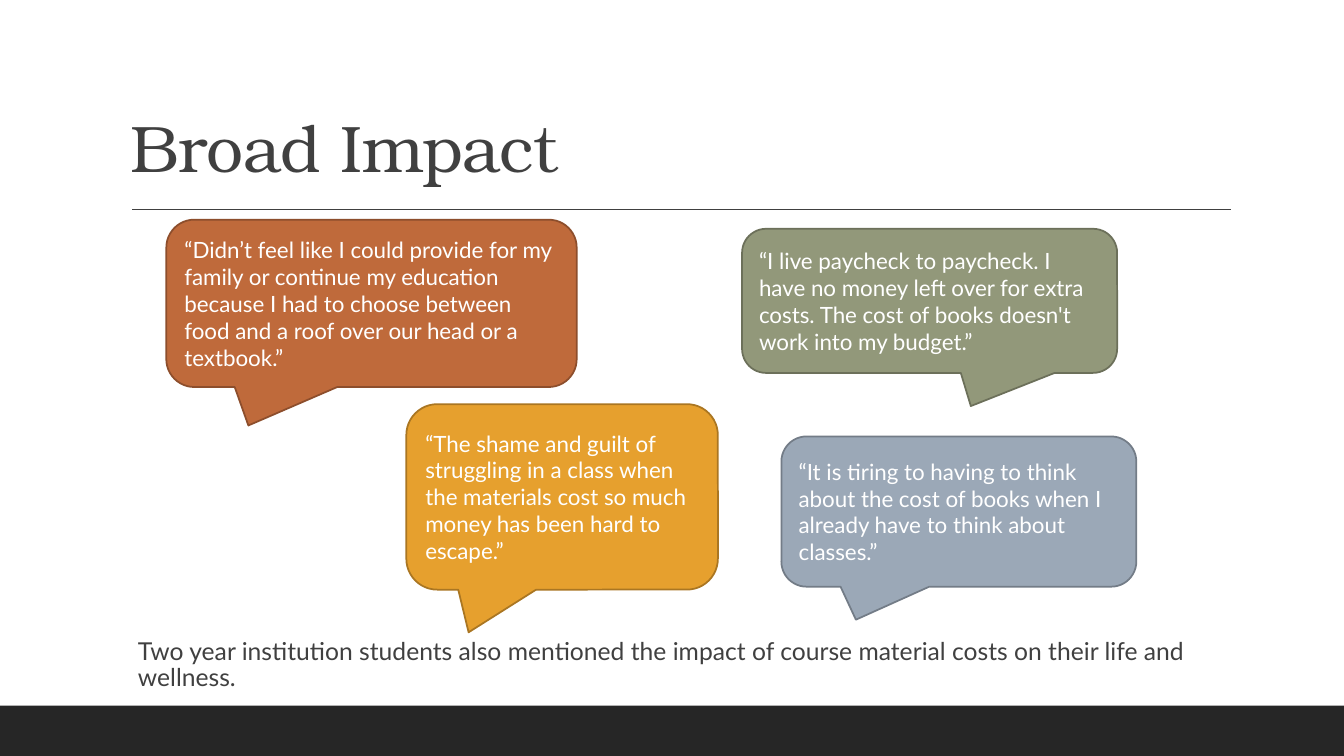
from pptx import Presentation
from pptx.dml.color import RGBColor
from pptx.enum.shapes import MSO_CONNECTOR as CONNECTOR, MSO_SHAPE as SHAPE
from pptx.enum.text import MSO_ANCHOR as ANCHOR, PP_ALIGN as ALIGN
from pptx.oxml.ns import qn
from pptx.util import Pt

PX = 9144  # EMU per px, 100 px to the inch
WHITE = RGBColor(0xFF, 0xFF, 0xFF)
DARK = RGBColor(0x26, 0x26, 0x26)
GREY = RGBColor(0x40, 0x40, 0x40)
BLUE, BLUE_EDGE = RGBColor(0x9B, 0xA8, 0xB7), RGBColor(0x73, 0x7C, 0x87)
RUST, RUST_EDGE = RGBColor(0xBF, 0x6A, 0x3B), RGBColor(0x8D, 0x4E, 0x2C)
GREEN, GREEN_EDGE = RGBColor(0x92, 0x98, 0x7A), RGBColor(0x6C, 0x70, 0x5A)
AMBER, AMBER_EDGE = RGBColor(0xE6, 0xA0, 0x2E), RGBColor(0xAA, 0x76, 0x22)


def px(*lengths):
    return [length * PX for length in lengths]


def write(shape, text, font, size, color, anchor, **paragraph_format):
    """Fill the shape with one left-aligned paragraph and return its run."""
    frame = shape.text_frame
    frame.word_wrap = True
    frame.vertical_anchor = anchor
    paragraph = frame.paragraphs[0]
    paragraph.alignment = ALIGN.LEFT
    for name, value in paragraph_format.items():
        setattr(paragraph, name, value)
    run = paragraph.add_run()
    run.text = text
    run.font.name = font
    run.font.size = Pt(size)
    run.font.color.rgb = color
    return run


presentation = Presentation()
presentation.slide_width, presentation.slide_height = px(1333, 750)
slide = presentation.slides.add_slide(presentation.slide_layouts[6])
shapes = slide.shapes

footer = shapes.add_shape(SHAPE.RECTANGLE, *px(0, 700, 1333, 50))
footer.shadow.inherit = False
footer.fill.solid()
footer.fill.fore_color.rgb = DARK
footer.line.fill.background()

rule = shapes.add_connector(CONNECTOR.STRAIGHT, *px(131, 208, 1221, 208))
rule.line.color.rgb = GREY
rule.line.width = Pt(1)
properties = rule._element.spPr
properties.append(properties.makeelement(qn("a:effectLst"), {}))

title = shapes.add_textbox(*px(120, 31, 1100, 159))
title_run = write(title, "Broad Impact", "TeX Gyre Bonum", 47, GREY,
                  ANCHOR.BOTTOM, line_spacing=0.9)
title_run.font._element.set("spc", "-50")

summary = shapes.add_textbox(*px(127, 629, 1100, 65))
summary.text_frame.margin_left, summary.text_frame.margin_right = px(10, 0)
write(summary,
      "Two year institution students also mentioned the impact of course "
      "material costs on their life and wellness.",
      "Lato", 17.6, GREY, ANCHOR.TOP,
      line_spacing=0.9, space_before=Pt(12), space_after=Pt(2))

# Box in px, tail tip from the centre as shares of the box, colours, quote
quotes = [
    ((775, 433, 352, 149), (-0.29, 0.72), BLUE, BLUE_EDGE,
     "“It is tiring to having to think about the cost of books when I "
     "already have to think about classes.”"),
    ((165, 218, 407, 166), (-0.3, 0.73), RUST, RUST_EDGE,
     "“Didn’t feel like I could provide for my family or continue my "
     "education because I had to choose between food and a roof over our "
     "head or a textbook.”"),
    ((736, 227, 372, 143), (0.11, 0.73), GREEN, GREEN_EDGE,
     "“I live paycheck to paycheck. I have no money left over for extra "
     "costs. The cost of books doesn't work into my budget.”"),
    ((403, 401, 309, 184), (-0.3, 0.73), AMBER, AMBER_EDGE,
     "“The shame and guilt of struggling in a class when the materials cost "
     "so much money has been hard to escape.”"),
]
for box, (tail_x, tail_y), fill, edge, quote in quotes:
    bubble = shapes.add_shape(SHAPE.ROUNDED_RECTANGULAR_CALLOUT, *px(*box))
    bubble.shadow.inherit = False
    bubble.adjustments[0] = tail_x
    bubble.adjustments[1] = tail_y
    bubble.fill.solid()
    bubble.fill.fore_color.rgb = fill
    bubble.line.color.rgb = edge
    bubble.line.width = Pt(1.25)
    write(bubble, quote, "Lato", 16, WHITE, ANCHOR.MIDDLE)

presentation.save("out.pptx")
